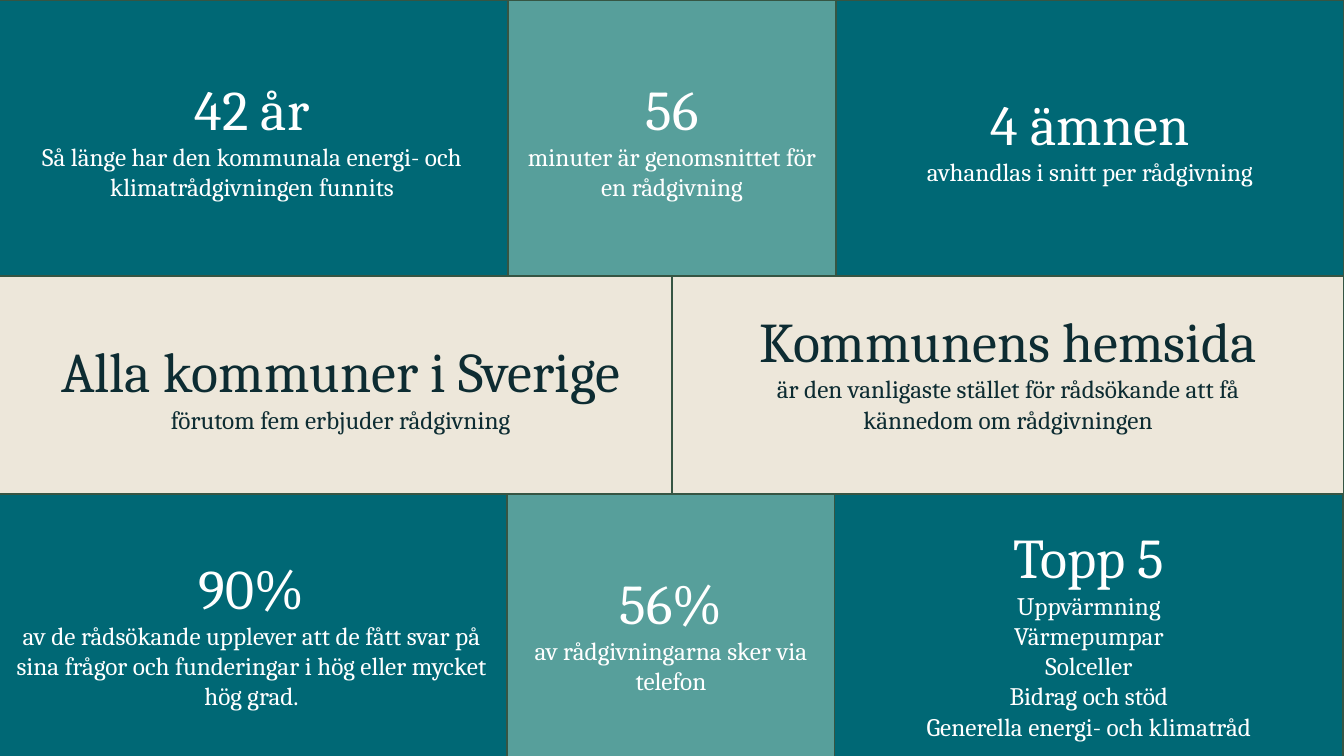
from pptx import Presentation, util as u
from pptx.dml.color import RGBColor
from pptx.enum import shapes, text

TEAL, SEA, SAND = "006875", "579F9B", "EDE7DA"
WHITE, INK, EDGE = "FFFFFF", "0D2C32", "365543"
W, H = 13.33, 7.5
BLEED = 0.04          # the left cells reach past the slide edge
ROW, MID = 2.74, 2.17  # heights of the outer and middle bands
LINE = 0.3            # one line of body text


def paint(fmt, color):
    """Give a fill or a font a solid colour."""
    if hasattr(fmt, "solid"):
        fmt.solid()
        fmt.fore_color.rgb = RGBColor.from_string(color)
    else:
        fmt.color.rgb = RGBColor.from_string(color)


def add_cell(s, box, fill, ink, lines, lift=0):
    """One fact: a large heading over body lines, centred in its box."""
    sp = s.shapes.add_shape(shapes.MSO_SHAPE.RECTANGLE, *map(u.Inches, box))
    sp.shadow.inherit = False
    paint(sp.fill, fill)
    paint(sp.line.fill, EDGE)
    sp.line.width = u.Pt(1)
    tf = sp.text_frame
    layout = {"word_wrap": True, "vertical_anchor": text.MSO_ANCHOR.MIDDLE,
              "margin_bottom": u.Inches(0.05 + lift)}
    for name, value in layout.items():
        setattr(tf, name, value)
    for i, line in enumerate(lines):
        p = tf.add_paragraph() if i else tf.paragraphs[0]
        p.text = line
        p.alignment = text.PP_ALIGN.CENTER
        for r in p.runs:
            style = {"name": "Cambria", "size": u.Pt(18 if i else 40)}
            for name, value in style.items():
                setattr(r.font, name, value)
            paint(r.font, ink)


def add_outer_band(s, top, edges, facts):
    """Three cells: dark, light, dark."""
    for left, right, fill, lines in zip(edges, edges[1:], (TEAL, SEA, TEAL), facts):
        add_cell(s, (left, top, right - left, ROW), fill, WHITE, lines)


def add_middle_band(s, top, facts):
    """Two sand cells; the right one covers the edge of the left one."""
    half = W / 2
    boxes = ((-BLEED, top, half + 0.17, MID), (half, top, half, MID))
    for box, lines, lift in zip(boxes, facts, (0, LINE)):
        add_cell(s, box, SAND, INK, lines, lift)


def main():
    prs = Presentation()
    prs.slide_width, prs.slide_height = u.Inches(W), u.Inches(H)
    s = prs.slides.add_slide(prs.slide_layouts[6])

    # Top band
    add_outer_band(s, 0, (-BLEED, 5.04, 8.29, W), (
        ("42 år", "Så länge har den kommunala energi- och klimatrådgivningen funnits"),
        ("56", "minuter är genomsnittet för en rådgivning"),
        ("4 ämnen", "avhandlas i snitt per rådgivning")))

    # Middle band
    add_middle_band(s, ROW, (
        ("Alla kommuner i Sverige", "förutom fem erbjuder rådgivning"),
        ("Kommunens hemsida", "är den vanligaste stället för rådsökande att få\n"
         "kännedom om rådgivningen")))

    # Bottom band
    add_outer_band(s, ROW + MID - 0.01, (-BLEED, 5.03, 8.28, W - 0.01), (
        ("90%", "av de rådsökande upplever att de fått svar på sina frågor "
         "och funderingar i hög eller mycket hög grad."),
        ("56%", "av rådgivningarna sker via telefon"),
        ("Topp 5", "Uppvärmning", "Värmepumpar\nSolceller", "Bidrag och stöd",
         "Generella energi- och klimatråd")))

    prs.save("out.pptx")


if __name__ == "__main__":
    main()
